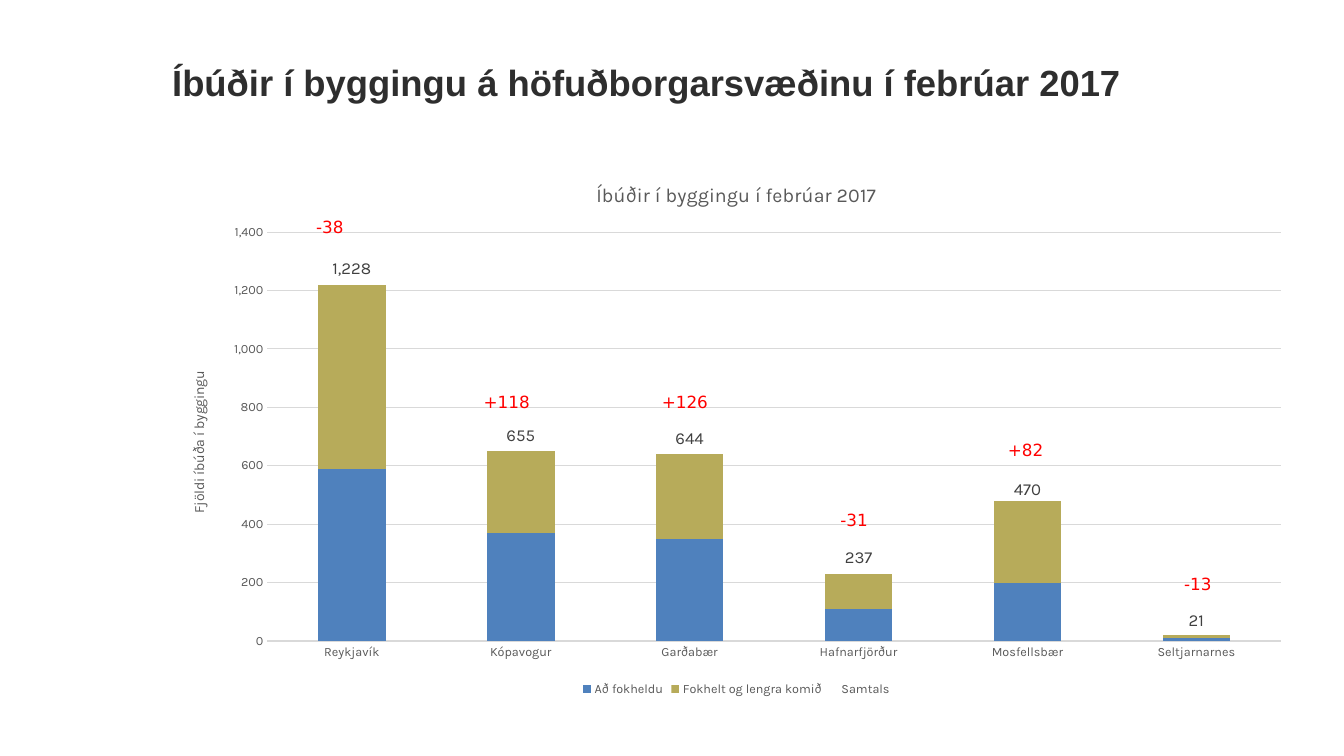
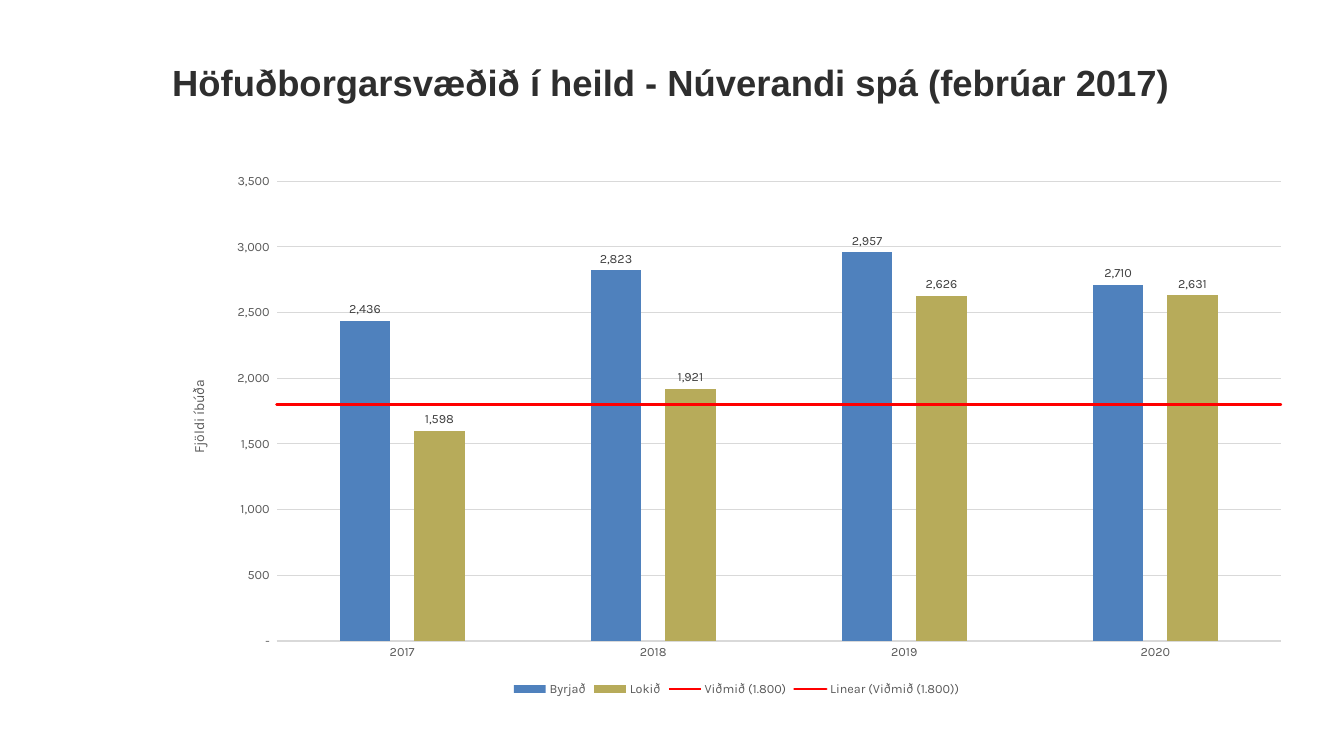
from copy import deepcopy
from dataclasses import dataclass

from pptx import Presentation
from pptx.chart.data import CategoryChartData
from pptx.dml.color import RGBColor
from pptx.enum.chart import XL_CHART_TYPE, XL_LABEL_POSITION, XL_LEGEND_POSITION, XL_MARKER_STYLE, XL_TICK_MARK
from pptx.enum.text import MSO_ANCHOR
from pptx.oxml import parse_xml
from pptx.oxml.ns import nsdecls, qn
from pptx.util import Cm, Pt


@dataclass(frozen=True)
class Theme:
    title_font: str = "Arial"
    chart_font: str = "Karla"
    change_font: str = "DejaVu Sans"
    title_color: str = "2E2E2E"
    text: str = "595959"
    label: str = "404040"
    grid: str = "D9D9D9"
    red: str = "FF0000"
    bars: tuple = ("4F81BD", "B7AB5A")
    title_size: int = 26
    chart_title_size: int = 14
    change_size: int = 12
    axis_title_size: int = 10
    small_size: int = 9


theme = Theme()


def style_font(font, name, size, color, bold=False):
    font.name = name
    font.size = Pt(size)
    font.bold = bold
    font.color.rgb = RGBColor.from_string(color)


def add_text(slide, text, box, font_name, size, color, bold=False):
    shape = slide.shapes.add_textbox(*(Cm(length) for length in box))
    text_frame = shape.text_frame
    text_frame.text = text
    style_font(text_frame.paragraphs[0].runs[0].font, font_name, size, color, bold)
    return text_frame


chart_slides = [
    {
        "title": "Íbúðir í byggingu á höfuðborgarsvæðinu í febrúar 2017",
        "chart_title": "Íbúðir í byggingu í febrúar 2017",
        "axis_title": "Fjöldi íbúða í byggingu",
        "type": XL_CHART_TYPE.COLUMN_STACKED,
        "categories": ["Reykjavík", "Kópavogur", "Garðabær", "Hafnarfjörður", "Mosfellsbær", "Seltjarnarnes"],
        "series": {
            "Að fokheldu": [590, 370, 350, 110, 200, 10],
            "Fokhelt og lengra komið": [630, 280, 290, 120, 280, 10],
            "Samtals": [1228, 655, 644, 237, 470, 21],
        },
        "gap": 150,
        "overlap": 100,
        "maximum": 1400,
        "unit": 200,
        "format": "#,##0",
        "changes": [
            ("-38", 7.72, 5.33, 1.24),
            ("+118", 11.94, 9.75, 1.68),
            ("+126", 16.43, 9.75, 1.68),
            ("-31", 20.93, 12.73, 1.24),
            ("+82", 25.15, 10.95, 1.4),
            ("-13", 29.59, 14.33, 1.24),
        ],
    },
    {
        "title": "Höfuðborgarsvæðið í heild - Núverandi spá (febrúar 2017)",
        "chart_title": None,
        "axis_title": "Fjöldi íbúða",
        "type": XL_CHART_TYPE.COLUMN_CLUSTERED,
        "categories": ["2017", "2018", "2019", "2020"],
        "series": {
            "Byrjað": [2436, 2823, 2957, 2710],
            "Lokið": [1598, 1921, 2626, 2631],
            "Viðmið (1.800)": [1800, 1800, 1800, 1800],
        },
        "gap": 249,
        "overlap": -47,
        "maximum": 3500,
        "unit": 500,
        "format": '_(* #,##0_);_(* \\(#,##0\\);_(* "-"_);_(@_)',
        "changes": [],
    },
]

presentation = Presentation()
presentation.slide_width = Cm(33.87)
presentation.slide_height = Cm(19.05)

for content in chart_slides:
    slide = presentation.slides.add_slide(presentation.slide_layouts[6])
    stacked = content["type"] == XL_CHART_TYPE.COLUMN_STACKED

    title_frame = add_text(slide, content["title"], (4.34, 1.52, 25.88, 1.19),
                           theme.title_font, theme.title_size, theme.title_color, True)
    title_frame.word_wrap = True
    title_frame.vertical_anchor = MSO_ANCHOR.MIDDLE
    title_frame.margin_left = title_frame.margin_right = 0
    title_frame.margin_top = title_frame.margin_bottom = 0
    title_frame.paragraphs[0].line_spacing = 0.95

    chart_data = CategoryChartData(number_format="#,##0")
    chart_data.categories = content["categories"]
    for name, values in content["series"].items():
        chart_data.add_series(name, values)
    chart = slide.shapes.add_chart(content["type"], Cm(4.27), Cm(4.11), Cm(28.58), Cm(13.54), chart_data).chart
    style_font(chart.font, theme.chart_font, theme.axis_title_size, "000000")

    chart.has_title = content["chart_title"] is not None
    if chart.has_title:
        chart_title = chart.chart_title.text_frame
        chart_title.text = content["chart_title"]
        style_font(chart_title.paragraphs[0].runs[0].font, theme.chart_font, theme.chart_title_size, theme.text)

    chart.has_legend = True
    chart.legend.position = XL_LEGEND_POSITION.BOTTOM
    chart.legend.include_in_layout = False
    style_font(chart.legend.font, theme.chart_font, theme.small_size, theme.text)

    value_axis, category_axis = chart.value_axis, chart.category_axis
    for axis in (value_axis, category_axis):
        axis.major_tick_mark = axis.minor_tick_mark = XL_TICK_MARK.NONE
        style_font(axis.tick_labels.font, theme.chart_font, theme.small_size, theme.text)
    value_axis.minimum_scale = 0
    value_axis.maximum_scale = content["maximum"]
    value_axis.major_unit = content["unit"]
    value_axis.tick_labels.number_format = content["format"]
    value_axis.tick_labels.number_format_is_linked = False
    value_axis.format.line.fill.background()
    for line in (category_axis.format.line, value_axis.major_gridlines.format.line):
        line.color.rgb = RGBColor.from_string(theme.grid)
        line.width = Pt(0.75)
    axis_title = value_axis.axis_title.text_frame
    axis_title.text = content["axis_title"]
    style_font(axis_title.paragraphs[0].runs[0].font, theme.chart_font, theme.axis_title_size, theme.text)
    axis_title._txBody.bodyPr.set("rot", "-5400000")
    axis_title._txBody.bodyPr.set("vert", "horz")

    bar_plot = chart.plots[0]
    bar_plot.vary_by_categories = False
    bar_plot.gap_width = content["gap"]
    bar_plot.overlap = content["overlap"]

    bar_element = bar_plot._element
    line_element = parse_xml(
        f'<c:lineChart {nsdecls("c")}><c:grouping val="standard"/><c:varyColors val="0"/>'
        '<c:marker val="1"/></c:lineChart>')
    line_series_element = bar_element.findall(qn("c:ser"))[-1]
    for bar_setting in line_series_element.findall(qn("c:invertIfNegative")):
        line_series_element.remove(bar_setting)
    line_element.insert(2, line_series_element)
    for axis_id in bar_element.findall(qn("c:axId")):
        line_element.append(deepcopy(axis_id))
    bar_element.addnext(line_element)

    for series, color in zip(bar_plot.series, theme.bars):
        series.format.fill.solid()
        series.format.fill.fore_color.rgb = RGBColor.from_string(color)
        series.format.line.fill.background()

    line_series = chart.plots[1].series[0]
    line_series.smooth = False
    line_series.marker.style = XL_MARKER_STYLE.NONE
    if stacked:
        line_series.format.line.fill.background()
        labelled, label_size, label_position = [line_series], theme.change_size, XL_LABEL_POSITION.ABOVE
    else:
        line_series.format.line.color.rgb = RGBColor.from_string(theme.red)
        line_series.format.line.width = Pt(2)
        trend_line = parse_xml(
            f'<c:trendline {nsdecls("c", "a")}><c:spPr><a:ln w="{int(Pt(2))}" cap="rnd"><a:solidFill>'
            f'<a:srgbClr val="{theme.red}"/></a:solidFill></a:ln></c:spPr>'
            '<c:trendlineType val="linear"/><c:forward val="0.5"/><c:backward val="0.5"/>'
            '<c:dispRSqr val="0"/><c:dispEq val="0"/></c:trendline>')
        line_series_element.find(qn("c:cat")).addprevious(trend_line)
        labelled, label_size, label_position = bar_plot.series, theme.small_size, XL_LABEL_POSITION.OUTSIDE_END

    for series in labelled:
        labels = series.data_labels
        labels.show_value = True
        labels.position = label_position
        labels.number_format = "#,##0"
        labels.number_format_is_linked = False
        style_font(labels.font, theme.chart_font, label_size, theme.label)

    for change, left, top, width in content["changes"]:
        change_frame = add_text(slide, change, (left, top, width, 0.76),
                                theme.change_font, theme.change_size, theme.red)
        change_frame.word_wrap = False

presentation.save("out.pptx")
